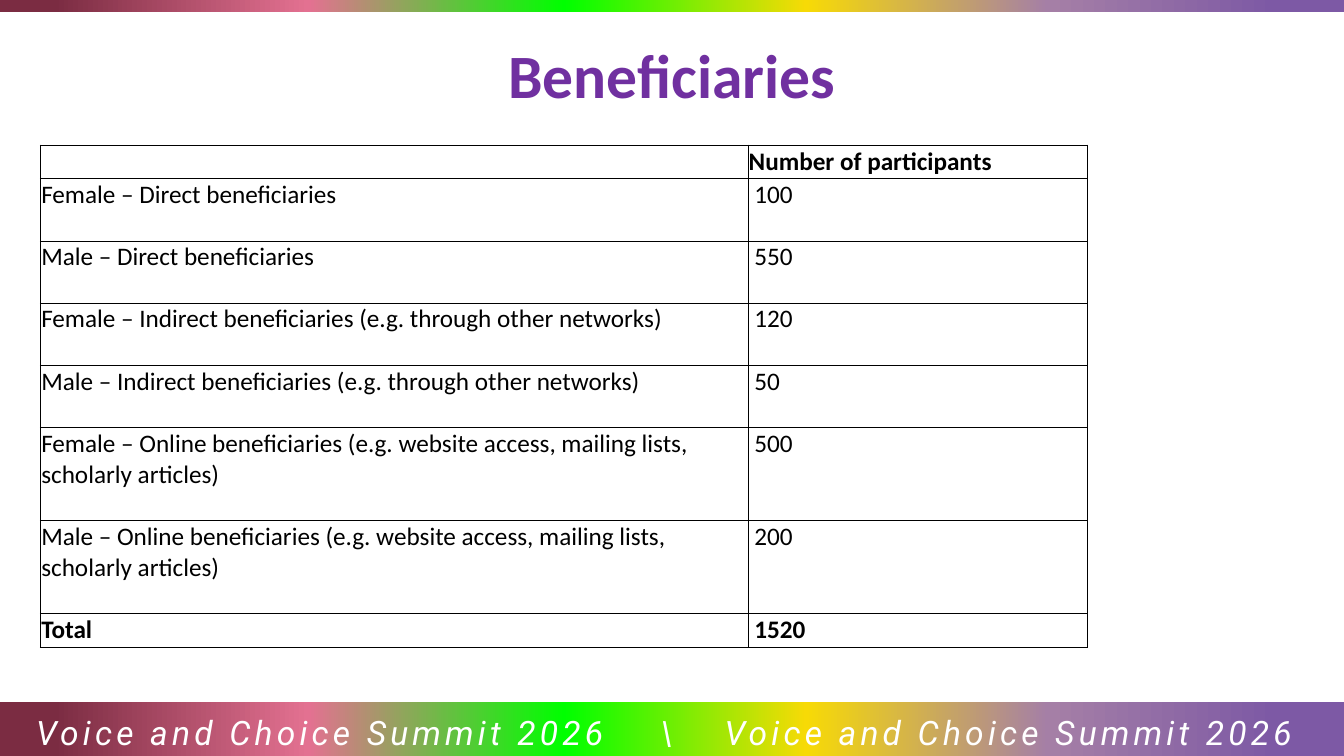
from dataclasses import dataclass

from lxml import etree
from pptx import Presentation, util as u
from pptx.dml.color import RGBColor
from pptx.enum import shapes, text
from pptx.oxml import ns


@dataclass(frozen=True)
class Theme:
    heading: str = "7030A0"
    ink: str = "000000"
    light: str = "FFFFFF"
    rainbow: tuple = ((5, "7D59A5"), (22, "A57FA6"), (40, "F7DA06"),
                      (58, "00FF00"), (77, "E37191"), (96, "7B2C42"))
    main_font: str = "Calibri"
    footer_font: str = "Roboto"
    title_size: int = 44
    footer_size: int = 24
    table_size: int = 18
    thick: float = 1
    thin: float = 0.5


THEME = Theme()
WIDTH, HEIGHT = 33.87, 19.05

SUMMIT = "Voice and Choice Summit 2026"
HEADER = ("", "Number of participants")
BENEFICIARIES = (
    ("Female – Direct beneficiaries", 100),
    ("Male – Direct beneficiaries", 550),
    ("Female – Indirect beneficiaries (e.g. through other networks)", 120),
    ("Male – Indirect beneficiaries (e.g. through other networks)", 50),
    ("Female – Online beneficiaries (e.g. website access, mailing lists, "
     "scholarly articles)", 500),
    ("Male – Online beneficiaries (e.g. website access, mailing lists, "
     "scholarly articles)", 200),
)
TOTAL = ("Total", sum(count for _, count in BENEFICIARIES))
COLUMN_WIDTHS = (17.83, 8.56)
ROW_HEIGHTS = (0.84, 1.57, 1.57, 1.57, 1.57, 2.34, 2.34, 0.86)


def add_child(parent, tag, **attributes):
    return etree.SubElement(parent, ns.qn(tag), **attributes)


def add_run(paragraph, words, font, size, color, bold=False, italic=False):
    run = paragraph.add_run()
    run.text = words
    run.font.name, run.font.size = font, u.Pt(size)
    run.font.bold, run.font.italic = bold, italic
    run.font.color.rgb = RGBColor.from_string(color)
    return run


def add_rainbow_bar(slide, left, top, width, height):
    bar = slide.shapes.add_shape(shapes.MSO_SHAPE.RECTANGLE, u.Cm(left),
                                 u.Cm(top), u.Cm(width), u.Cm(height))
    bar.shadow.inherit = False
    bar.line.fill.background()
    bar.fill.gradient()
    bar.fill.gradient_angle = 180
    stops = bar.element.spPr.find(".//" + ns.qn("a:gsLst"))
    for stop in list(stops):
        stops.remove(stop)
    for percent, color in THEME.rainbow:
        stop = add_child(stops, "a:gs", pos=str(percent * 1000))
        add_child(stop, "a:srgbClr", val=color)


def place_title(slide, left, top, width, height):
    title = slide.shapes.title
    title.left, title.top = u.Cm(left), u.Cm(top)
    title.width, title.height = u.Cm(width), u.Cm(height)
    frame = title.text_frame
    frame.vertical_anchor = text.MSO_ANCHOR.MIDDLE
    heading = frame.paragraphs[0]
    heading.alignment = text.PP_ALIGN.CENTER
    add_run(heading, "Beneficiaries", THEME.main_font, THEME.title_size,
            THEME.heading, bold=True)


def add_footer(slide, left, top, width, height):
    add_rainbow_bar(slide, left, top, width, height)
    banner = slide.shapes.add_textbox(u.Cm(left), u.Cm(top + 0.07),
                                      u.Cm(width), u.Cm(height - 0.13))
    frame = banner.text_frame
    frame.word_wrap = True
    frame.margin_left = u.Cm(0.91)
    motto = frame.paragraphs[0]
    motto.line_spacing = 1.07

    # Tab stops for the separator and the second motto
    tabs = add_child(motto._p.get_or_add_pPr(), "a:tabLst")
    for position in (15.72, 17.35):
        add_child(tabs, "a:tab", pos=str(u.Cm(position)), algn="l")
    run = add_run(motto, f"{SUMMIT}\t\\\t{SUMMIT}", THEME.footer_font,
                  THEME.footer_size, THEME.light, italic=True)
    run.font._element.set("spc", "300")


def set_borders(cell, **widths):
    properties = cell._tc.get_or_add_tcPr()
    for index, (side, points) in enumerate(widths.items()):
        border = etree.Element(ns.qn("a:ln" + side), w=str(u.Pt(points)))
        fill = add_child(border, "a:solidFill")
        add_child(fill, "a:srgbClr", val=THEME.ink)
        properties.insert(index, border)


def add_beneficiary_table(slide, left, top):
    rows = (HEADER, *BENEFICIARIES, TOTAL)
    last = len(rows) - 1
    table = slide.shapes.add_table(
        len(rows), len(HEADER), u.Cm(left), u.Cm(top),
        u.Cm(sum(COLUMN_WIDTHS)), u.Cm(sum(ROW_HEIGHTS))).table
    table.first_row = table.horz_banding = False
    for column, width in zip(table.columns, COLUMN_WIDTHS):
        column.width = u.Cm(width)

    for r, (entries, height) in enumerate(zip(rows, ROW_HEIGHTS)):
        table.rows[r].height = u.Cm(height)
        for c, entry in enumerate(entries):
            cell = table.cell(r, c)
            cell.fill.background()
            # Counts are set slightly in from the column edge
            cell.margin_left = u.Cm(0.16 if c and r else 0.02)
            cell.margin_right = cell.margin_top = u.Cm(0.02)
            cell.margin_bottom = 0
            paragraph = cell.text_frame.paragraphs[0]
            paragraph.font.size = u.Pt(THEME.table_size)
            if entry != "":
                add_run(paragraph, str(entry), THEME.main_font,
                        THEME.table_size, THEME.ink, bold=r in (0, last))
            # Thick lines outside and above the total, thin lines inside
            set_borders(cell,
                        L=THEME.thin if c else THEME.thick,
                        R=THEME.thick if c else THEME.thin,
                        T=THEME.thick if r in (0, last) else THEME.thin,
                        B=THEME.thick if r >= last - 1 else THEME.thin)


def build_beneficiaries_slide(deck):
    slide = deck.slides.add_slide(deck.slide_layouts[5])
    add_rainbow_bar(slide, 0, 0, WIDTH, 0.3)
    place_title(slide, 0, 0.69, WIDTH, 2.34)
    add_beneficiary_table(slide, 1.02, 3.66)
    add_footer(slide, 0, HEIGHT - 1.37, WIDTH, 1.37)


def main():
    deck = Presentation()
    deck.slide_width, deck.slide_height = u.Cm(WIDTH), u.Cm(HEIGHT)
    build_beneficiaries_slide(deck)
    deck.save("out.pptx")


if __name__ == "__main__":
    main()
